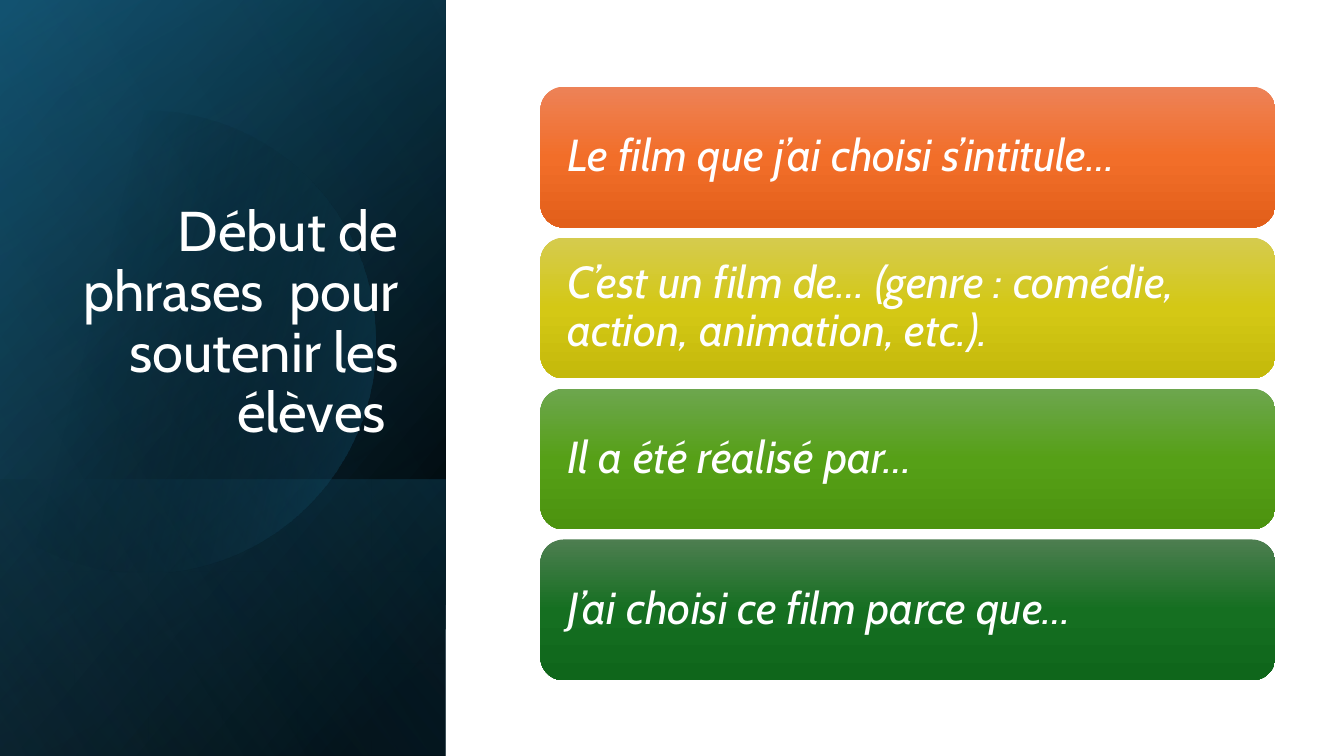
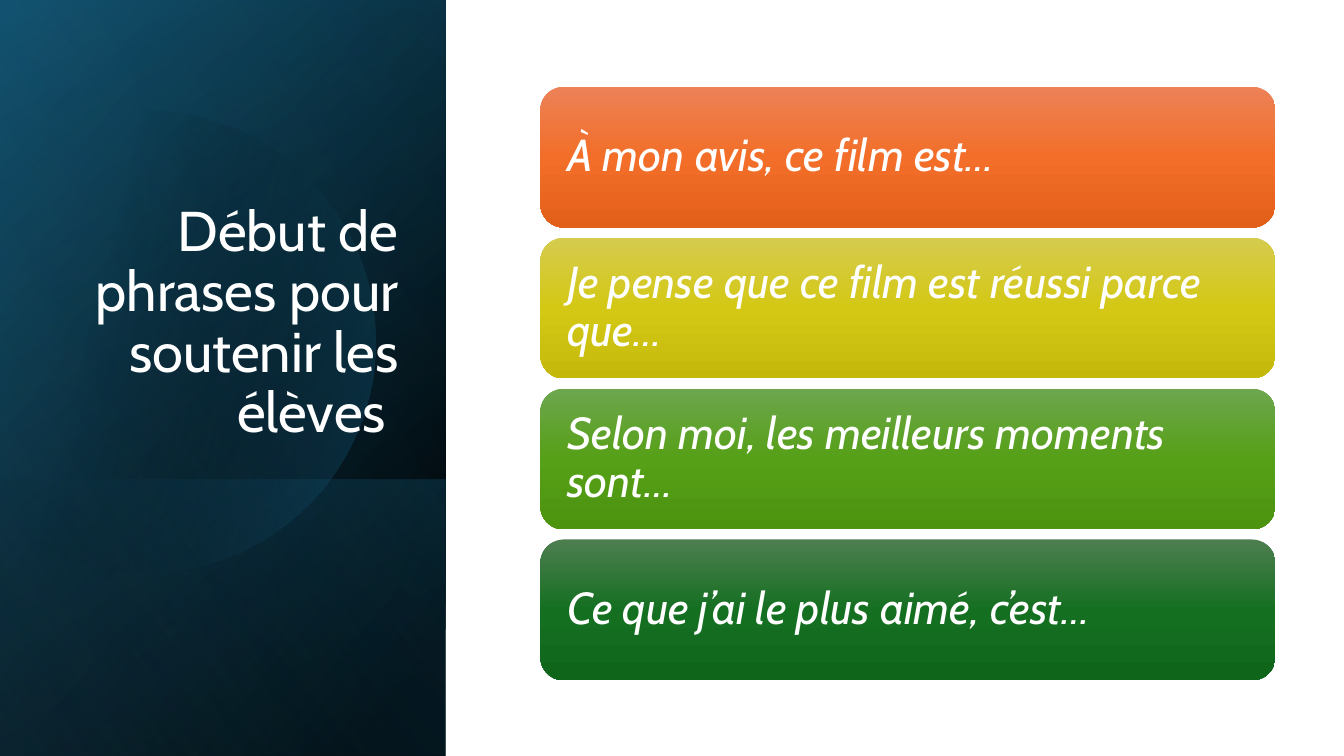
from dataclasses import dataclass
from math import acos, cos, pi, sin

from lxml.etree import SubElement
from pptx import Presentation
from pptx.dml.color import RGBColor
from pptx.enum.shapes import MSO_SHAPE as Preset
from pptx.enum.text import MSO_ANCHOR as Anchor, PP_ALIGN as Align
from pptx.oxml.ns import qn
from pptx.util import Inches, Pt


@dataclass(frozen=True)
class Gradient:
    angle: int
    stops: tuple


@dataclass(frozen=True)
class Theme:
    font: str = "Cabin"
    text: str = "FFFFFF"
    title_size: int = 40
    card_size: int = 32
    line_spacing: float = 0.9
    base: Gradient = Gradient(50, ((8, "000000", 100), (100, "104862", 100)))
    tint: Gradient = Gradient(30, ((0, "000000", 0), (99, "156082", 46)))
    foot: Gradient = Gradient(130, ((2, "156082", 29), (100, "000000", 30)))
    disc: Gradient = Gradient(14, ((29, "000000", 0), (100, "156082", 43)))
    sheen: Gradient = Gradient(120, ((0, "000000", 0), (99, "46B1E1", 11)))
    cards: tuple = (
        ("ED8257", "F26E29", "E25F1A"),
        ("D5CB4E", "D4C815", "C4B90B"),
        ("6DA64E", "56A017", "4C930F"),
        ("4D7E50", "156F21", "0F661B"),
    )


THEME = Theme()
SLIDE_W, SLIDE_H = 13.33, 7.5
PANEL_W = 4.42
FOOT_H = 2.74
TITLE_BOX = (0.64, 1.84, 3.41, 2.62)
DISC_X, DISC_Y, DISC_R = 1.43, 3.39, 2.29
DISC_STEPS = 90
CARDS_LEFT, CARDS_TOP, CARDS_W, CARDS_H = 5.36, 0.86, 7.29, 5.89
CARD_GAP = 0.1
CARD_INSET = 0.2

SLIDES = (
    ("Début de phrases  pour soutenir les élèves ", (
        "Le film que j’ai choisi s’intitule…",
        "C’est un film de… (genre : comédie, action, animation, etc.).",
        "Il a été réalisé par…",
        "J’ai choisi ce film parce que…",
    )),
    ("Début de phrases pour soutenir les élèves ", (
        "À mon avis, ce film est…",
        "Je pense que ce film est réussi parce que…",
        "Selon moi, les meilleurs moments sont…",
        "Ce que j’ai le plus aimé, c’est…",
    )),
)


def paint(shape, gradient):
    shape.shadow.inherit = False
    shape.line.fill.background()
    shape.fill.gradient()
    fill = shape._element.spPr.find(qn("a:gradFill"))
    stop_list = fill.find(qn("a:gsLst"))
    for default_stop in list(stop_list):
        stop_list.remove(default_stop)
    for position, color, opacity in gradient.stops:
        stop = SubElement(stop_list, qn("a:gs"), pos=str(position * 1000))
        tone = SubElement(stop, qn("a:srgbClr"), val=color)
        if opacity < 100:
            SubElement(tone, qn("a:alpha"), val=str(opacity * 1000))
    fill.find(qn("a:lin")).set("ang", str(gradient.angle * 60000))


def write(shape, text, size, align, anchor, italic=False):
    frame = shape.text_frame
    frame.text = text
    frame.word_wrap = True
    frame.vertical_anchor = anchor
    paragraph = frame.paragraphs[0]
    paragraph.alignment = align
    paragraph.line_spacing = THEME.line_spacing
    font = paragraph.runs[0].font
    font.name, font.size, font.italic = THEME.font, Pt(size), italic
    font.color.rgb = RGBColor.from_string(THEME.text)


def add_panel_layer(slide, height, gradient):
    left = (PANEL_W - height) / 2
    top = SLIDE_H - (height + PANEL_W) / 2
    layer = slide.shapes.add_shape(
        Preset.RECTANGLE, *map(Inches, (left, top, height, PANEL_W)))
    layer.rotation = 90
    layer._element.spPr.find(qn("a:xfrm")).set("flipH", "1")
    paint(layer, gradient)


def add_disc(slide):
    reach = acos(-DISC_X / DISC_R)
    angles = [reach * (2 * step / DISC_STEPS - 1) for step in range(DISC_STEPS + 1)]
    rim = [(Inches(DISC_X + DISC_R * cos(angle)), Inches(DISC_Y + DISC_R * sin(angle)))
           for angle in angles]
    outline = slide.shapes.build_freeform(*rim[0])
    outline.add_line_segments(rim[1:], close=True)
    paint(outline.convert_to_shape(), THEME.disc)


def add_panel(slide):
    add_panel_layer(slide, SLIDE_H, THEME.base)
    add_panel_layer(slide, SLIDE_H, THEME.tint)
    add_panel_layer(slide, FOOT_H, THEME.foot)
    add_disc(slide)
    add_panel_layer(slide, SLIDE_H, THEME.sheen)


def add_title(slide, text):
    title = slide.shapes.add_textbox(*map(Inches, TITLE_BOX))
    write(title, text, THEME.title_size, Align.RIGHT, Anchor.BOTTOM)


def add_cards(slide, sentences):
    height = (CARDS_H - CARD_GAP * (len(sentences) - 1)) / len(sentences)
    for row, (sentence, tones) in enumerate(zip(sentences, THEME.cards)):
        top = CARDS_TOP + row * (height + CARD_GAP)
        card = slide.shapes.add_shape(
            Preset.ROUNDED_RECTANGLE, *map(Inches, (CARDS_LEFT, top, CARDS_W, height)))
        stops = tuple((place, tone, 100) for place, tone in zip((0, 50, 100), tones))
        paint(card, Gradient(90, stops))
        frame = card.text_frame
        frame.margin_left = frame.margin_right = Inches(CARD_INSET)
        frame.margin_top = frame.margin_bottom = Inches(CARD_INSET)
        write(card, sentence, THEME.card_size, Align.LEFT, Anchor.MIDDLE, italic=True)


def main():
    deck = Presentation()
    deck.slide_width, deck.slide_height = Inches(SLIDE_W), Inches(SLIDE_H)
    for title, sentences in SLIDES:
        slide = deck.slides.add_slide(deck.slide_layouts[6])
        add_panel(slide)
        add_title(slide, title)
        add_cards(slide, sentences)
    deck.save("out.pptx")


if __name__ == "__main__":
    main()
